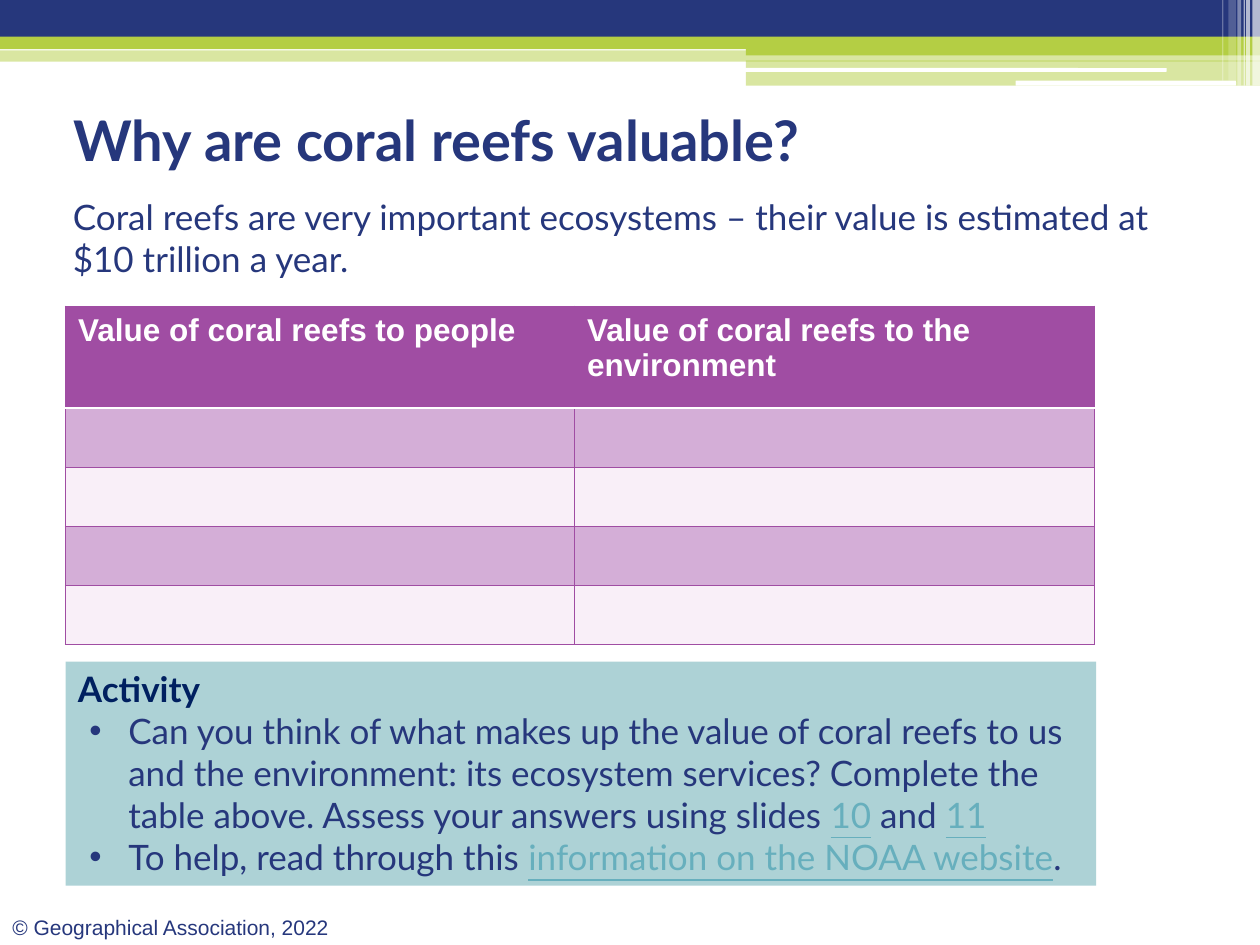
"""Build the slide on the value of coral reefs."""
from typing import NamedTuple

from lxml.etree import SubElement
from pptx import Presentation
from pptx.dml.color import RGBColor
from pptx.enum.shapes import MSO_SHAPE
from pptx.enum.text import MSO_ANCHOR, PP_ALIGN
from pptx.oxml import parse_xml
from pptx.oxml.ns import nsdecls, qn
from pptx.util import Pt

SCALE = 9144
HUES = {
    "navy": "26377C", "lime": "B4CE44", "white": "FFFFFF", "teal": "ADD2D6",
    "dark": "002060", "link": "67AFBD", "plum": "A04DA3",
    "band": "D4AED7", "pale": "F9EFF8",
}


class Box(NamedTuple):
    x: int
    y: int
    w: int
    h: int


class Bar(NamedTuple):
    box: Box
    hue: str
    alpha: int = 100
    kind: MSO_SHAPE = MSO_SHAPE.RECTANGLE


class Run(NamedTuple):
    text: str
    hue: str = "navy"
    size: int = 20
    face: str = "Lato"
    bold: bool = False
    line: bool = False


ROUND = MSO_SHAPE.ROUNDED_RECTANGLE
BARS = [
    Bar(Box(0, 40, 1000, 9), "lime", 50),
    Bar(Box(0, 0, 1000, 34), "navy"),
    Bar(Box(0, 29, 1000, 10), "lime"),
    Bar(Box(592, 34, 408, 10), "lime"),
    Bar(Box(592, 48, 408, 20), "lime", 50),
    Bar(Box(591, 54, 335, 3), "white", kind=ROUND),
    Bar(Box(806, 64, 175, 4), "white", kind=ROUND),
] + [
    Bar(Box(x, 0, w, h), "white", alpha)
    for x, w, h, alpha in [
        (994, 6, 68, 65), (989, 3, 68, 65), (987, 1, 68, 60),
        (982, 3, 68, 40), (975, 6, 64, 20), (970, 1, 64, 30),
    ]
]
HEADS = ["Value of coral reefs to people", "Value of coral reefs to the environment"]
COLS = [404, 413]
ROWS = [81, 47, 47, 47, 47]
TASKS = [
    [
        Run("Can you think of what makes up the value of coral reefs to us and the "
            "environment: its ecosystem services? Complete the table above. Assess "
            "your answers using slides "),
        Run("10", "link", line=True),
        Run(" and "),
        Run("11", "link", line=True),
    ],
    [
        Run("To help, read through this "),
        Run("information on the NOAA website", "link", line=True),
        Run("."),
    ],
]


def rgb(hue: str) -> RGBColor:
    return RGBColor.from_string(HUES[hue])


def emu(box: Box) -> list[int]:
    return [n * SCALE for n in box]


def write(para, runs: list[Run]) -> None:
    para.alignment = PP_ALIGN.LEFT
    for item in runs:
        run = para.add_run()
        run.text = item.text
        form = {"name": item.face, "size": Pt(item.size),
                "bold": item.bold, "underline": item.line}
        for key, value in form.items():
            setattr(run.font, key, value)
        run.font.color.rgb = rgb(item.hue)


def add_bar(slide, bar: Bar):
    shape = slide.shapes.add_shape(bar.kind, *emu(bar.box))
    shape.shadow.inherit = False
    shape.fill.solid()
    shape.fill.fore_color.rgb = rgb(bar.hue)
    shape.line.fill.background()
    if bar.alpha < 100:
        tint = shape.fill._xPr.find(".//" + qn("a:srgbClr"))
        SubElement(tint, qn("a:alpha"), val=str(bar.alpha * 1000))
    return shape


def add_text(slide, box: Box, run: Run) -> None:
    frame = slide.shapes.add_textbox(*emu(box)).text_frame
    frame.word_wrap = True
    write(frame.paragraphs[0], [run])


def add_task(frame, runs: list[Run]) -> None:
    para = frame.add_paragraph()
    props = para._p.get_or_add_pPr()
    props.set("marL", str(40 * SCALE))
    props.set("indent", str(-31 * SCALE))
    SubElement(props, qn("a:buFont"), typeface="Arial")
    SubElement(props, qn("a:buChar"), char="•")
    write(para, runs)


def edge(cell, sides: dict[str, tuple[str, float]]) -> None:
    props = cell._tc.get_or_add_tcPr()
    for spot, (side, (hue, width)) in enumerate(sides.items()):
        props.insert(spot, parse_xml(
            f'<a:ln{side} {nsdecls("a")} w="{Pt(width)}"><a:solidFill>'
            f'<a:srgbClr val="{HUES[hue]}"/></a:solidFill></a:ln{side}>'))


def add_grid(slide, box: Box) -> None:
    table = slide.shapes.add_table(len(ROWS), len(COLS), *emu(box)).table
    for col, width in zip(table.columns, COLS):
        col.width = width * SCALE
    thin, thick = ("plum", 0.75), ("white", 1.5)
    for r, height in enumerate(ROWS):
        table.rows[r].height = height * SCALE
        for c, head in enumerate(HEADS):
            cell = table.cell(r, c)
            cell.fill.solid()
            cell.fill.fore_color.rgb = rgb("plum" if r == 0 else "band" if r % 2 else "pale")
            edge(cell, {"L": thin, "R": thin,
                        "T": thick if r == 1 else thin,
                        "B": thick if r == 0 else thin})
            if r == 0:
                write(cell.text_frame.paragraphs[0],
                      [Run(head, "white", 18, "Arial", bold=True)])


def main() -> None:
    deck = Presentation()
    deck.slide_width, deck.slide_height = 1000 * SCALE, 750 * SCALE
    slide = deck.slides.add_slide(deck.slide_layouts[5])
    for bar in BARS:
        add_bar(slide, bar)
    add_text(slide, Box(0, 721, 287, 30),
             Run("© Geographical Association, 2022", size=12, face="Arial"))

    title = slide.shapes.title
    for key, value in zip(("left", "top", "width", "height"), emu(Box(48, 67, 900, 87))):
        setattr(title, key, value)
    title.text_frame.vertical_anchor = MSO_ANCHOR.MIDDLE
    write(title.text_frame.paragraphs[0],
          [Run("Why are coral reefs valuable?", size=32, bold=True)])

    add_text(slide, Box(48, 150, 920, 96),
             Run("Coral reefs are very important ecosystems – their value is "
                 "estimated at $10 trillion a year."))
    frame = add_bar(slide, Bar(Box(52, 525, 818, 178), "teal")).text_frame
    frame.word_wrap = True
    frame.vertical_anchor = MSO_ANCHOR.TOP
    write(frame.paragraphs[0], [Run("Activity", "dark", bold=True)])
    for task in TASKS:
        add_task(frame, task)
    add_grid(slide, Box(52, 243, sum(COLS), sum(ROWS)))
    deck.save("out.pptx")


if __name__ == "__main__":
    main()
